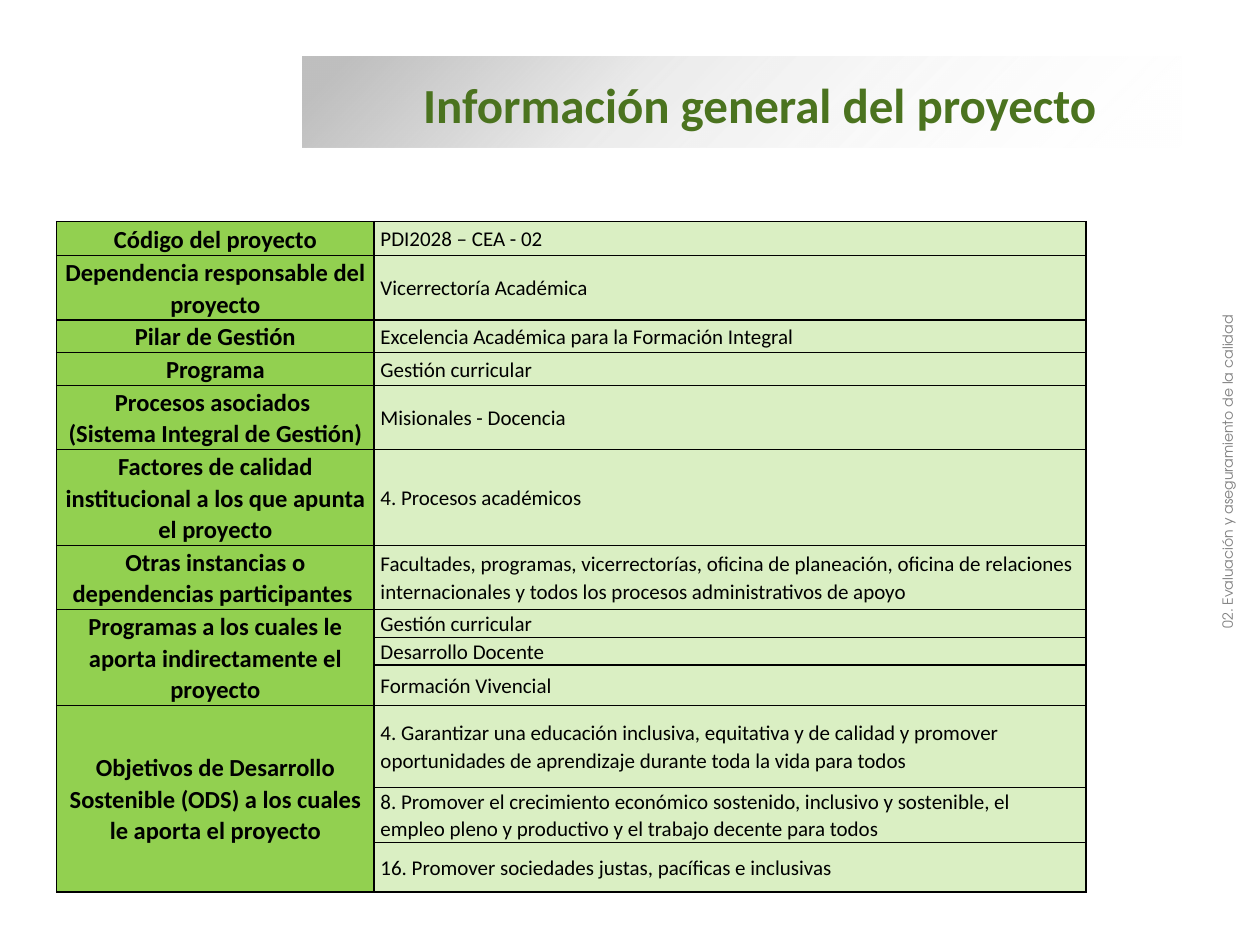
from dataclasses import dataclass

from lxml.etree import SubElement
from pptx import Presentation
from pptx.dml.color import RGBColor
from pptx.enum.shapes import MSO_SHAPE
from pptx.enum.text import MSO_ANCHOR, PP_ALIGN
from pptx.oxml import parse_xml
from pptx.oxml.ns import nsdecls, qn
from pptx.shapes.group import GroupShape
from pptx.slide import Slide
from pptx.table import Table, _Cell
from pptx.text.text import _Paragraph
from pptx.util import Inches, Pt

BLACK = RGBColor(0x00, 0x00, 0x00)
GRAY = RGBColor(0x80, 0x80, 0x80)
SILVER = RGBColor(0xBF, 0xBF, 0xBF)
WHITE = RGBColor(0xFF, 0xFF, 0xFF)
TITLE_GREEN = RGBColor(0x4B, 0x73, 0x1F)
LABEL_GREEN = RGBColor(0x92, 0xD0, 0x50)
VALUE_GREEN = RGBColor(0xDA, 0xEF, 0xC3)


@dataclass(frozen=True)
class TextStyle:
    size: float
    color: RGBColor
    bold: bool = False
    font: str = "Calibri"
    align: PP_ALIGN = PP_ALIGN.LEFT


@dataclass(frozen=True)
class CellStyle:
    text: TextStyle
    fill: RGBColor
    margin: float


@dataclass(frozen=True)
class Entry:
    label: str
    values: tuple[str, ...]
    heights: tuple[float, ...]


@dataclass(frozen=True)
class GradientStop:
    position: int
    color: RGBColor
    opacity: int


LABEL = CellStyle(TextStyle(14, BLACK, bold=True, align=PP_ALIGN.CENTER), LABEL_GREEN, 0.04)
VALUE = CellStyle(TextStyle(12, BLACK), VALUE_GREEN, 0.05)
TITLE = TextStyle(28, TITLE_GREEN, bold=True)
SIDE_NOTE = TextStyle(8, GRAY, font="TeX Gyre Adventor", align=PP_ALIGN.CENTER)
COLUMN_WIDTHS = (2.52, 5.65)
BAND_STOPS = (
    GradientStop(5, SILVER, 100),
    GradientStop(37, SILVER, 31),
    GradientStop(100, WHITE, 0),
)

ENTRIES = (
    Entry("Código del proyecto", ("PDI2028 – CEA - 02",), (0.27,)),
    Entry("Dependencia responsable del proyecto", ("Vicerrectoría Académica",), (0.51,)),
    Entry("Pilar de Gestión", ("Excelencia Académica para la Formación Integral",), (0.26,)),
    Entry("Programa", ("Gestión curricular",), (0.26,)),
    Entry("Procesos asociados \n(Sistema Integral de Gestión)", ("Misionales - Docencia",), (0.51,)),
    Entry(
        "Factores de calidad institucional a los que apunta el proyecto",
        ("4. Procesos académicos",),
        (0.76,),
    ),
    Entry(
        "Otras instancias o dependencias participantes ",
        (
            "Facultades, programas, vicerrectorías, oficina de planeación, oficina de relaciones "
            "internacionales y todos los procesos administrativos de apoyo",
        ),
        (0.51,),
    ),
    Entry(
        "Programas a los cuales le aporta indirectamente el proyecto",
        ("Gestión curricular", "Desarrollo Docente", "Formación Vivencial"),
        (0.22, 0.22, 0.32),
    ),
    Entry(
        "Objetivos de Desarrollo Sostenible (ODS) a los cuales le aporta el proyecto",
        (
            "4. Garantizar una educación inclusiva, equitativa y de calidad y promover "
            "oportunidades de aprendizaje durante toda la vida para todos",
            "8. Promover el crecimiento económico sostenido, inclusivo y sostenible, el empleo "
            "pleno y productivo y el trabajo decente para todos",
            "16. Promover sociedades justas, pacíficas e inclusivas",
        ),
        (0.65, 0.44, 0.39),
    ),
)


def write_text(para: _Paragraph, text: str, style: TextStyle) -> None:
    para.text = text
    para.alignment = style.align
    for line_break in para._p.findall(qn("a:br")):
        SubElement(line_break, qn("a:rPr"), sz=str(int(style.size * 100)))
    for span in para.runs:
        span.font.name = style.font
        span.font.size = Pt(style.size)
        span.font.bold = style.bold
        span.font.color.rgb = style.color


def style_cell(cell: _Cell, style: CellStyle) -> None:
    properties = cell._tc.get_or_add_tcPr()
    for side in ("lnL", "lnR", "lnT", "lnB"):
        properties.append(parse_xml(
            f'<a:{side} {nsdecls("a")} w="{Pt(1)}"><a:solidFill>'
            f'<a:srgbClr val="{BLACK}"/></a:solidFill></a:{side}>'
        ))
    cell.fill.solid()
    cell.fill.fore_color.rgb = style.fill
    cell.vertical_anchor = MSO_ANCHOR.MIDDLE
    cell.margin_left = cell.margin_right = Inches(style.margin)
    cell.margin_top = cell.margin_bottom = Inches(0)


def fill_cell(cell: _Cell, text: str, style: CellStyle) -> None:
    para = cell.text_frame.paragraphs[0]
    write_text(para, text, style.text)
    para.line_spacing = 1.07


def fill_entry(table: Table, first_row: int, entry: Entry) -> None:
    for row, (value, height) in enumerate(zip(entry.values, entry.heights), first_row):
        table.rows[row].height = Inches(height)
        style_cell(table.cell(row, 0), LABEL)
        style_cell(table.cell(row, 1), VALUE)
        fill_cell(table.cell(row, 1), value, VALUE)
    label_cell = table.cell(first_row, 0)
    if len(entry.values) > 1:
        label_cell.merge(table.cell(first_row + len(entry.values) - 1, 0))
    fill_cell(label_cell, entry.label, LABEL)


def add_project_table(page: Slide) -> None:
    row_count = sum(len(entry.values) for entry in ENTRIES)
    total_height = sum(sum(entry.heights) for entry in ENTRIES)
    table = page.shapes.add_table(
        row_count, len(COLUMN_WIDTHS), Inches(0.45), Inches(1.76),
        Inches(sum(COLUMN_WIDTHS)), Inches(total_height),
    ).table
    table.first_row = table.horz_banding = False
    for column, width in zip(table.columns, COLUMN_WIDTHS):
        column.width = Inches(width)
    row = 0
    for entry in ENTRIES:
        fill_entry(table, row, entry)
        row += len(entry.values)


def add_band(group: GroupShape) -> None:
    band = group.shapes.add_shape(
        MSO_SHAPE.RECTANGLE, Inches(2.4), Inches(0.45), Inches(6.98), Inches(0.72)
    )
    band.shadow.inherit = False
    band.line.fill.background()
    band.fill.background()
    stops = "".join(
        f'<a:gs pos="{stop.position * 1000}"><a:srgbClr val="{stop.color}">'
        f'<a:alpha val="{stop.opacity * 1000}"/></a:srgbClr></a:gs>'
        for stop in BAND_STOPS
    )
    gradient = parse_xml(
        f'<a:gradFill {nsdecls("a")} rotWithShape="1"><a:gsLst>{stops}</a:gsLst>'
        f'<a:lin ang="{45 * 60000}" scaled="0"/></a:gradFill>'
    )
    properties = band._element.spPr
    properties.replace(properties.find(qn("a:noFill")), gradient)


def add_text(parent: Slide | GroupShape, bounds: tuple[float, ...], text: str,
             style: TextStyle, anchor: MSO_ANCHOR, rotation: float = 0) -> None:
    box = parent.shapes.add_textbox(*(Inches(length) for length in bounds))
    box.rotation = rotation
    box.text_frame.word_wrap = True
    box.text_frame.vertical_anchor = anchor
    write_text(box.text_frame.paragraphs[0], text, style)


def main() -> None:
    deck = Presentation()
    deck.slide_width, deck.slide_height = Inches(10), Inches(7.5)
    page = deck.slides.add_slide(deck.slide_layouts[6])
    add_project_table(page)
    header = page.shapes.add_group_shape()
    add_band(header)
    add_text(header, (3.26, 0.54, 6.2, 0.57), "Información general del proyecto",
             TITLE, MSO_ANCHOR.MIDDLE)
    add_text(page, (7.39, 3.56, 4.84, 0.37), "02. Evaluación y aseguramiento de la calidad",
             SIDE_NOTE, MSO_ANCHOR.TOP, rotation=270)
    deck.save("out.pptx")


if __name__ == "__main__":
    main()
